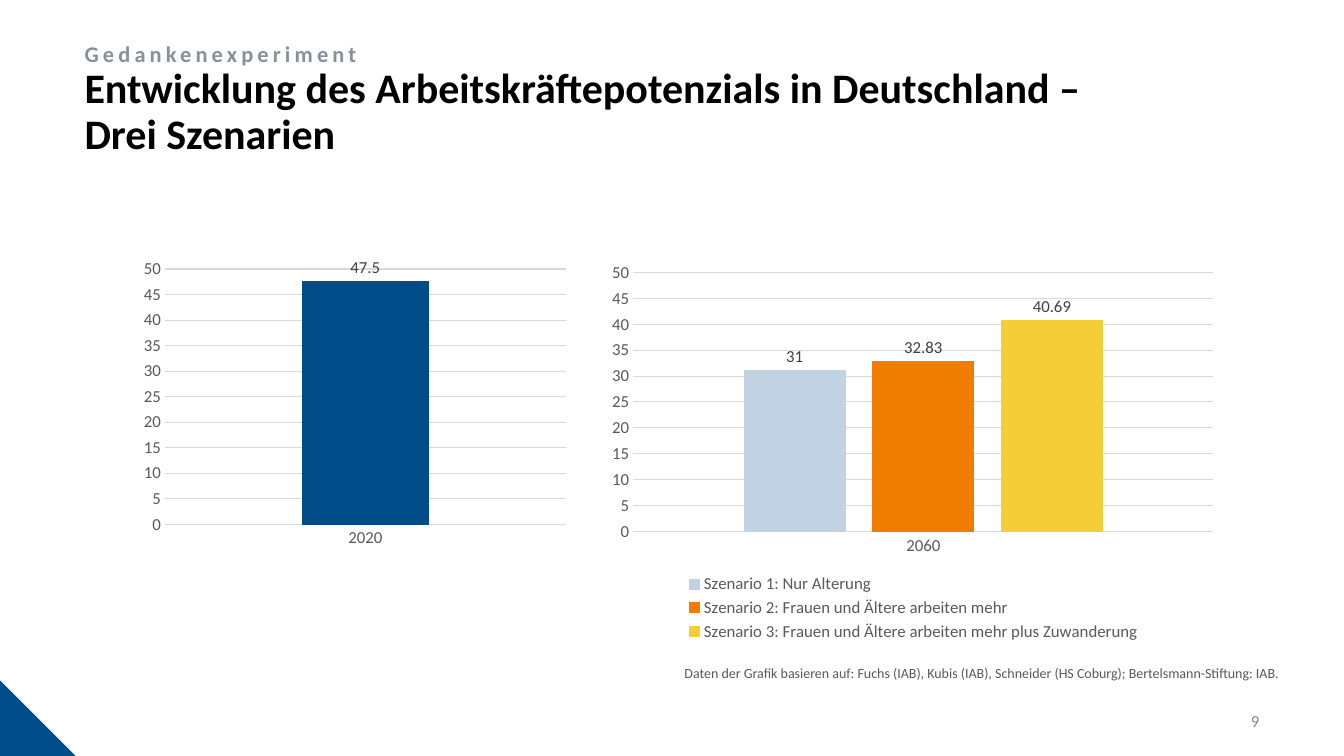
"""Build the slide on three scenarios for the German labour force."""
from lxml import etree
from pptx import Presentation
from pptx import util as u
from pptx.chart.data import CategoryChartData
from pptx.dml.color import RGBColor
from pptx.enum import chart as ch, shapes, text
from pptx.oxml.ns import qn

PX = 9144
FONT = "Calibri"
COLORS = {
    "blue": "004C89", "pale": "C1D2E2", "orange": "F07D00", "yellow": "F4CE39",
    "black": "000000", "label": "404040", "axis": "595959", "grid": "D9D9D9",
    "kicker": "87919A", "number": "8C8C8C",
}
SCENARIOS = [
    ("Szenario 1: Nur Alterung", 31, "pale"),
    ("Szenario 2: Frauen und Ältere arbeiten mehr", 32.83, "orange"),
    ("Szenario 3: Frauen und Ältere arbeiten mehr plus Zuwanderung", 40.69, "yellow"),
]


def px(*values):
    """Turn px lengths into EMU."""
    return [u.Emu(v * PX) for v in values]


def rgb(name):
    """Return a named colour."""
    return RGBColor.from_string(COLORS[name])


def style_font(font, size, color, bold=False):
    """Set face, size, colour and weight."""
    font.name, font.size, font.bold = FONT, u.Pt(size), bold
    font.color.rgb = rgb(color)


def add_text(s, box, content, size, color, bold=False, spacing=None, line=None,
             anchor=text.MSO_ANCHOR.TOP, align=text.PP_ALIGN.LEFT, wrap=True):
    """Add a text box with one paragraph and return its frame."""
    tf = s.shapes.add_textbox(*px(*box)).text_frame
    tf.word_wrap, tf.vertical_anchor = wrap, anchor
    p = tf.paragraphs[0]
    p.alignment, p.line_spacing = align, line
    r = p.add_run()
    r.text = content
    style_font(r.font, size, color, bold)
    if spacing:
        r.font._element.set("spc", str(spacing * 100))
    return tf


def add_corner(s, box):
    """Add the triangle in the slide corner."""
    sp = s.shapes.add_shape(shapes.MSO_SHAPE.RIGHT_TRIANGLE, *px(*box))
    sp.shadow.inherit = False
    sp.fill.solid()
    sp.fill.fore_color.rgb = rgb("blue")
    sp.line.fill.background()


def set_layout(parent, index, area, inner=False):
    """Place a chart part by fractions of the chart area."""
    for old in parent.findall(qn("c:layout")):
        parent.remove(old)
    layout = etree.Element(qn("c:layout"))
    manual = etree.SubElement(layout, qn("c:manualLayout"))
    settings = [("layoutTarget", "inner")] if inner else []
    settings += [("xMode", "edge"), ("yMode", "edge"), *zip("xywh", area)]
    for tag, value in settings:
        etree.SubElement(manual, qn(f"c:{tag}")).set("val", str(value))
    parent.insert(index, layout)


def style_axes(chart):
    """Style both axes and the gridlines."""
    for axis in (chart.category_axis, chart.value_axis):
        axis.major_tick_mark = axis.minor_tick_mark = ch.XL_TICK_MARK.NONE
        style_font(axis.tick_labels.font, 12, "axis")
    value_axis = chart.value_axis
    value_axis.minimum_scale, value_axis.maximum_scale = 0, 50
    value_axis.major_unit = 5
    value_axis.format.line.fill.background()
    for line in (chart.category_axis.format.line,
                 value_axis.major_gridlines.format.line):
        line.color.rgb, line.width = rgb("grid"), u.Pt(0.75)


def add_columns(s, box, year, series, plot_area):
    """Add a column chart for one year and return it."""
    data = CategoryChartData()
    data.categories = [year]
    for name, value, _ in series:
        data.add_series(name, [value])
    chart = s.shapes.add_chart(
        ch.XL_CHART_TYPE.COLUMN_CLUSTERED, *px(*box), data).chart
    chart.has_title = chart.has_legend = False
    style_font(chart.font, 10, "black")
    style_axes(chart)
    plot = chart.plots[0]
    plot.gap_width, plot.overlap, plot.vary_by_categories = 219, -27, False
    for column, (_, _, color) in zip(plot.series, series):
        fmt = column.format
        fmt.fill.solid()
        fmt.fill.fore_color.rgb = fmt.line.color.rgb = rgb(color)
        fmt.line.width = u.Pt(0.75)
        labels = column.data_labels
        labels.show_value = True
        labels.position = ch.XL_LABEL_POSITION.OUTSIDE_END
        style_font(labels.font, 12, "label")
    set_layout(chart._chartSpace.chart.plotArea, 0, plot_area, inner=True)
    return chart


def add_legend(chart, area):
    """Add a legend below the columns."""
    chart.has_legend = True
    legend = chart.legend
    legend.position = ch.XL_LEGEND_POSITION.BOTTOM
    legend.include_in_layout = False
    style_font(legend.font, 12, "axis")
    set_layout(legend._element, 1, area)


def main():
    """Build and save the slide."""
    prs = Presentation()
    prs.slide_width, prs.slide_height = px(1333, 750)
    s = prs.slides.add_slide(prs.slide_layouts[6])
    middle = text.MSO_ANCHOR.MIDDLE
    add_corner(s, (0, 675, 75, 75))
    add_text(s, (1184, 695, 75, 40), "9", 12, "number",
             anchor=middle, align=text.PP_ALIGN.RIGHT)
    title = add_text(
        s, (74, 51, 1086, 122),
        "Entwicklung des Arbeitskräftepotenzials in Deutschland – Drei Szenarien",
        30, "black", bold=True, line=0.9, anchor=middle)
    title.margin_right = px(20)[0]
    add_columns(s, (133, 252, 437, 298), "2020", [("Series 1", 47.5, "blue")],
                (0.07, 0.05, 0.91, 0.85))
    scenarios = add_columns(s, (597, 251, 619, 389), "2060", SCENARIOS,
                            (0.05, 0.05, 0.93, 0.66))
    add_legend(scenarios, (0.13, 0.81, 0.74, 0.19))
    add_text(s, (669, 654, 619, 27),
             "Daten der Grafik basieren auf: Fuchs (IAB), Kubis (IAB), "
             "Schneider (HS Coburg); Bertelsmann-Stiftung: IAB.",
             10, "axis", wrap=False)
    add_text(s, (74, 38, 1110, 52), "Gedankenexperiment", 16, "kicker",
             bold=True, spacing=3, line=0.9)
    prs.save("out.pptx")


if __name__ == "__main__":
    main()
